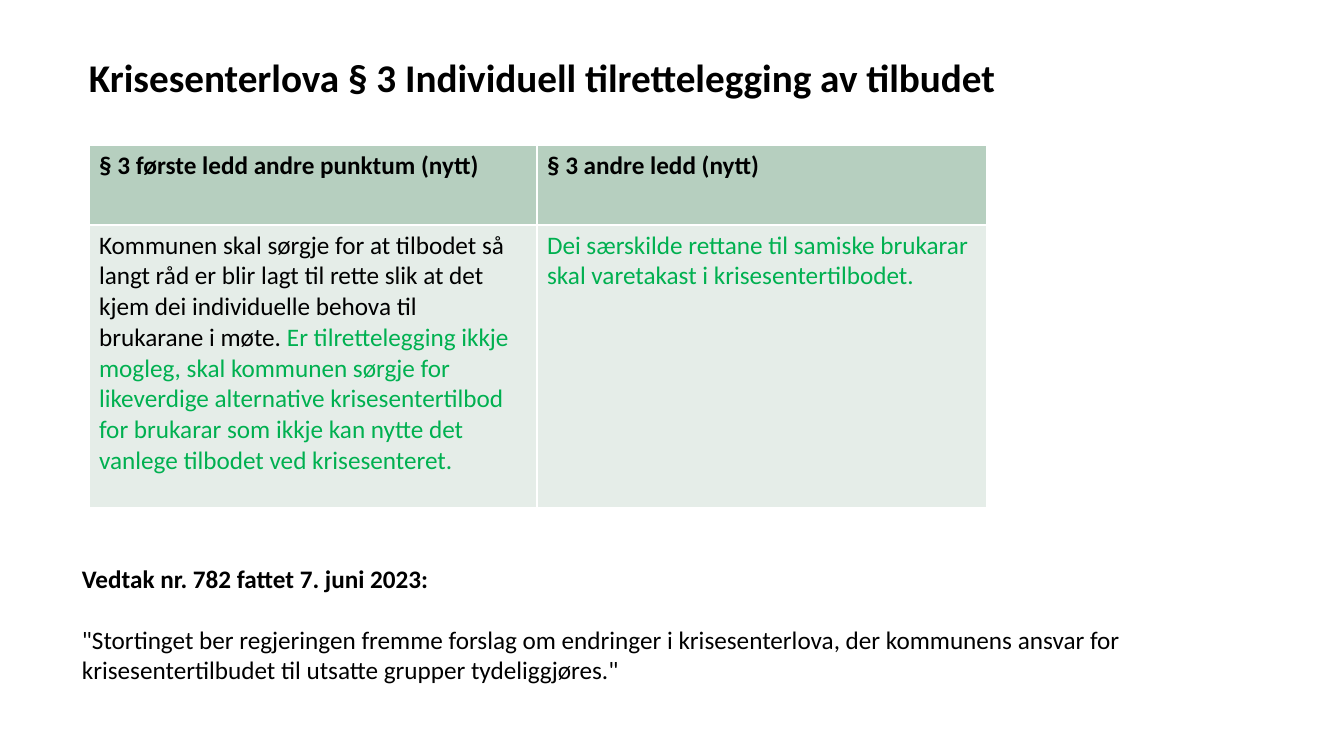
import pptx
import pptx.util
import pptx.dml.color
import pptx.enum.text
import pptx.oxml
import pptx.oxml.ns

COLORS = {
    "text": "000000",
    "new": "00B050",
    "header": "B6CFBF",
    "body": "E5EDE8",
    "border": "FFFFFF",
}
TITLE = [[("Krisesenterlova § 3 Individuell tilrettelegging av tilbudet", "text")]]
TABLE = [
    [
        [("§ 3 første ledd andre punktum (nytt)", "text")],
        [("§ 3 andre ledd (nytt)", "text")],
    ],
    [
        [
            ("Kommunen skal sørgje for at tilbodet så langt råd er blir lagt til rette slik at det "
             "kjem dei individuelle behova til brukarane i møte. ", "text"),
            ("Er tilrettelegging ikkje mogleg, skal kommunen sørgje for likeverdige alternative "
             "krisesentertilbod for brukarar som ikkje kan nytte det vanlege tilbodet ved "
             "krisesenteret.", "new"),
        ],
        [("Dei særskilde rettane til samiske brukarar skal varetakast i krisesentertilbodet.", "new")],
    ],
]
DECISION = [
    [("Vedtak nr. 782 fattet 7. juni 2023:", "text")],
    [("\"Stortinget ber regjeringen fremme forslag om endringer i krisesenterlova, der kommunens "
      "ansvar for krisesentertilbudet til utsatte grupper tydeliggjøres.\"", "text")],
]
COLUMN_WIDTHS = (448, 450)
ROW_HEIGHTS = (80, 283)


def px(length):
    return round(length * 914400 / 100.8)


def rgb(name):
    return pptx.dml.color.RGBColor.from_string(COLORS[name])


def write(para, spans, size, bold):
    for words, color in spans:
        span = para.add_run()
        span.text = words
        span.font.color.rgb = rgb(color)
    para.font.name = "Calibri"
    para.font.size = pptx.util.Pt(size)
    para.font.bold = bold


def add_text(page, place, paragraphs, size):
    box = page.shapes.add_textbox(*map(px, place))
    frame = box.text_frame
    frame.word_wrap = True
    for index, spans in enumerate(paragraphs):
        para = frame.paragraphs[0] if index == 0 else frame.add_paragraph()
        write(para, spans, size, index == 0)
        if index:
            para.space_before = pptx.util.Pt(22)
    return frame


def style_cell(cell, fill):
    properties = cell._tc.get_or_add_tcPr()
    for side in ("lnL", "lnR", "lnT", "lnB"):
        properties.append(pptx.oxml.parse_xml(
            f'<a:{side} {pptx.oxml.ns.nsdecls("a")} w="12700"><a:solidFill>'
            f'<a:srgbClr val="{COLORS["border"]}"/></a:solidFill></a:{side}>'
        ))
    cell.fill.solid()
    cell.fill.fore_color.rgb = rgb(fill)


def add_law_table(page):
    table = page.shapes.add_table(
        len(ROW_HEIGHTS), len(COLUMN_WIDTHS), px(89), px(145),
        px(sum(COLUMN_WIDTHS)), px(sum(ROW_HEIGHTS)),
    ).table
    for column, width in zip(table.columns, COLUMN_WIDTHS):
        column.width = px(width)
    for row, height in zip(table.rows, ROW_HEIGHTS):
        row.height = px(height)
    for r, row in enumerate(TABLE):
        for c, spans in enumerate(row):
            cell = table.cell(r, c)
            style_cell(cell, "body" if r else "header")
            write(cell.text_frame.paragraphs[0], spans, 18, r == 0)


def main():
    deck = pptx.Presentation()
    deck.slide_width, deck.slide_height = px(1344), px(756)
    page = deck.slides.add_slide(deck.slide_layouts[6])
    title = add_text(page, (89, 28, 1153, 73), TITLE, 28)
    title.margin_left = title.margin_right = title.margin_top = title.margin_bottom = 0
    title.vertical_anchor = pptx.enum.text.MSO_ANCHOR.BOTTOM
    title.paragraphs[0].line_spacing = 0.9
    add_law_table(page)
    add_text(page, (72, 558, 1108, 132), DECISION, 18)
    deck.save("out.pptx")


if __name__ == "__main__":
    main()
